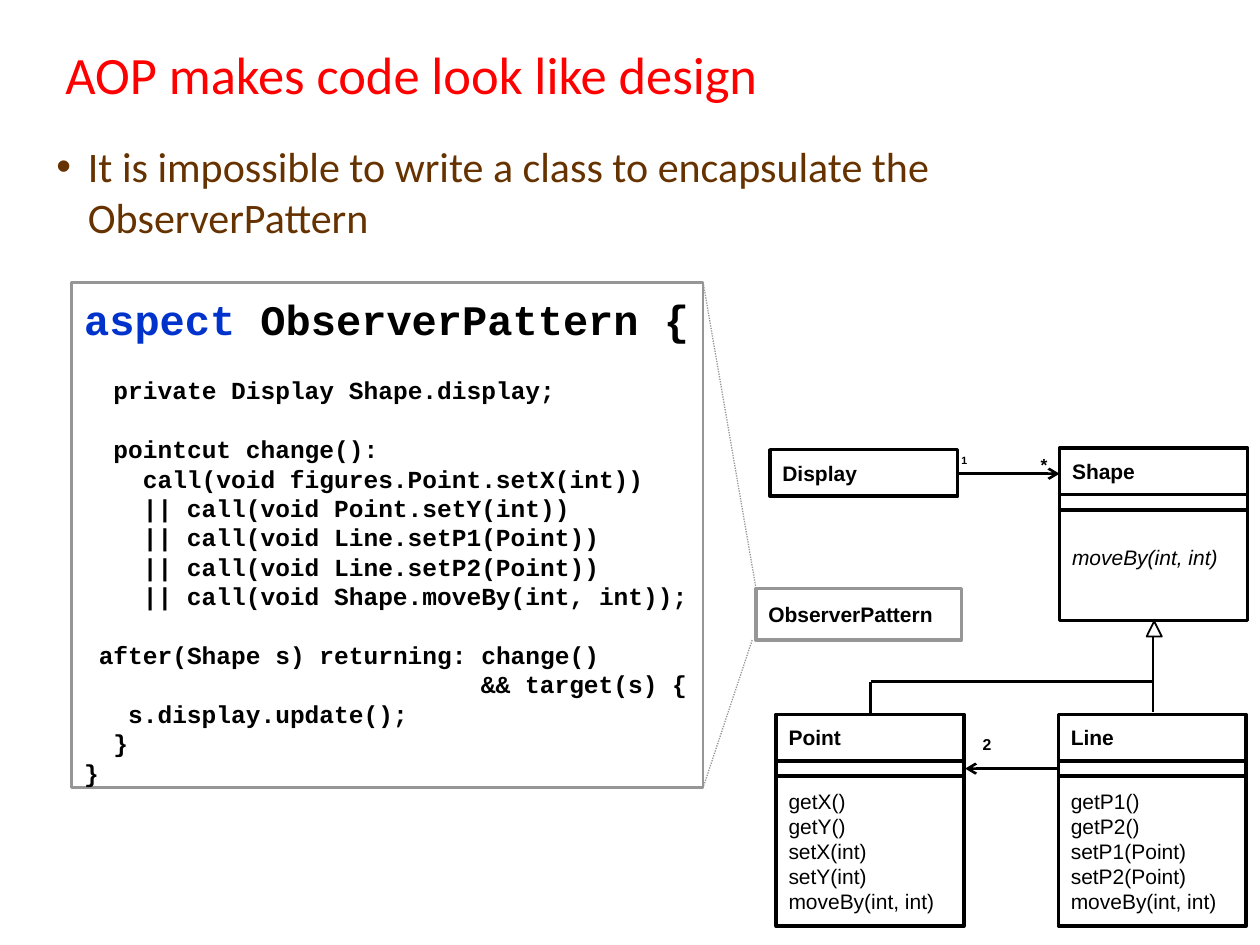
from dataclasses import dataclass
from lxml.etree import SubElement
from pptx import Presentation
from pptx.dml.color import RGBColor
from pptx.enum.dml import MSO_LINE
from pptx.enum.shapes import MSO_CONNECTOR, MSO_SHAPE
from pptx.enum.text import MSO_ANCHOR, PP_ALIGN
from pptx.oxml.ns import qn
from pptx.util import Pt

RED = RGBColor(0xFF, 0x00, 0x00)
BROWN = RGBColor(0x66, 0x33, 0x00)
BLUE = RGBColor(0x00, 0x33, 0xCC)
BLACK = RGBColor(0x00, 0x00, 0x00)
GRAY = RGBColor(0x96, 0x96, 0x96)
WHITE = RGBColor(0xFF, 0xFF, 0xFF)
WIDE = 107.3
HEAD = 26.6
BAND = 8.7
CHAR = 8.4
STEP = 16.8


@dataclass
class Font:
    size: float = 12
    name: str = "Arial"
    color: RGBColor = BLACK
    bold: bool = False
    italic: bool = False


@dataclass
class Row:
    text: str
    indent: int = 0
    gap: float = 0


@dataclass
class Entry:
    name: str
    left: float
    top: float
    calls: tuple = ()
    depth: float = 0
    italic: bool = False


BOLD = Font(bold=True)
CODE = Font(14, "Courier New", bold=True)
ROWS = [
    Row("private Display Shape.display;", 2, 18),
    Row("pointcut change():", 2, STEP),
    Row("call(void figures.Point.setX(int))", 4),
    Row("|| call(void Point.setY(int))", 4),
    Row("|| call(void Line.setP1(Point))", 4),
    Row("|| call(void Line.setP2(Point))", 4),
    Row("|| call(void Shape.moveBy(int, int));", 4),
    Row("after(Shape s) returning: change()", 1, STEP),
    Row("&& target(s) {", 27),
    Row("s.display.update();", 3),
    Row("}", 2),
    Row("}"),
]
MOVE = "moveBy(int, int)"
CLASSES = [
    Entry("Display", 440, 257),
    Entry("Point", 443.5, 408.2,
          ("getX()", "getY()", "setX(int)", "setY(int)", MOVE), 85.7),
    Entry("Line", 604.8, 408.2,
          ("getP1()", "getP2()", "setP1(Point)", "setP2(Point)", MOVE), 85.7),
    Entry("Shape", 605.5, 256, (MOVE,), 63.3, True),
]
LABELS = [
    ("1", 542.2, 255.6, 21, 6),
    ("2", 554.4, 416.2, 18, 9),
    ("*", 587.5, 255.6, 18, 10),
]
TREE = [
    (497.5, 407.5, 497.5, 389.5),
    (658.8, 406.8, 658.8, 362.9),
    (497.5, 389.5, 658.8, 389.5),
]
RAYS = [
    (432, 336.2, 401.8, 161.3),
    (429.8, 365.8, 401.8, 450),
]
ARROWS = [
    (604.8, 439.2, 551.5, 439.2),
    (547.2, 270.7, 605.5, 270.7),
]


def add_run(para, text: str, font: Font) -> None:
    run = para.add_run()
    run.text = text
    run.font.size = Pt(font.size)
    run.font.name = font.name
    run.font.color.rgb = font.color
    run.font.bold = font.bold
    run.font.italic = font.italic


def add_box(slide, left: float, top: float, width: float, height: float,
            line: RGBColor = BLACK, weight: float = 2, fill=None,
            kind=MSO_SHAPE.RECTANGLE):
    box = slide.shapes.add_shape(kind, Pt(left), Pt(top), Pt(width), Pt(height))
    box.shadow.inherit = False
    if fill is None:
        box.fill.background()
    else:
        box.fill.solid()
        box.fill.fore_color.rgb = fill
    box.line.color.rgb = line
    box.line.width = Pt(weight)
    return box


def add_lines(box, lines: tuple, font: Font) -> None:
    frame = box.text_frame
    frame.vertical_anchor = MSO_ANCHOR.MIDDLE
    for n, text in enumerate(lines):
        para = frame.add_paragraph() if n else frame.paragraphs[0]
        para.alignment = PP_ALIGN.LEFT
        para.line_spacing = Pt(14.4)
        add_run(para, text, font)


def add_line(slide, ends: tuple, color: RGBColor = BLACK,
             weight: float = 1.5, dash=None, arrow: bool = False) -> None:
    line = slide.shapes.add_connector(
        MSO_CONNECTOR.STRAIGHT, *[Pt(end) for end in ends])
    line.line.color.rgb = color
    line.line.width = Pt(weight)
    if dash is not None:
        line.line.dash_style = dash
    if arrow:
        SubElement(line.line._get_or_add_ln(), qn("a:tailEnd"), type="arrow")
    SubElement(line._element.spPr, qn("a:effectLst"))


def add_text(slide, left: float, top: float, width: float, height: float):
    box = slide.shapes.add_textbox(Pt(left), Pt(top), Pt(width), Pt(height))
    box.text_frame.word_wrap = True
    return box.text_frame.paragraphs[0]


def add_title(slide) -> None:
    title = slide.shapes.title
    title.left, title.top = Pt(30.2), Pt(23.8)
    title.width, title.height = Pt(653.8), Pt(36)
    title.text_frame.vertical_anchor = MSO_ANCHOR.MIDDLE
    para = title.text_frame.paragraphs[0]
    para.alignment = PP_ALIGN.LEFT
    add_run(para, "AOP makes code look like design", Font(30, "Calibri", RED))


def add_point(slide) -> None:
    para = add_text(slide, 25.2, 77, 660.2, 408.2)
    props = para._p.get_or_add_pPr()
    props.set("marL", str(Pt(18)))
    props.set("indent", str(-Pt(18)))
    SubElement(props, qn("a:buFont"), typeface="Arial")
    SubElement(props, qn("a:buChar"), char="•")
    add_run(para, "It is impossible to write a class to encapsulate the "
            "ObserverPattern", Font(24, "Calibri", BROWN))


def add_code(slide) -> None:
    frame = add_box(slide, 41, 161.3, 360.8, 288.7, GRAY, 1.5, WHITE).text_frame
    frame.vertical_anchor = MSO_ANCHOR.TOP
    frame.margin_right = Pt(0)
    first = frame.paragraphs[0]
    first.alignment = PP_ALIGN.LEFT
    first.line_spacing = Pt(31.6)
    add_run(first, "aspect", Font(24, "Courier New", BLUE, True))
    add_run(first, " ObserverPattern {", Font(24, "Courier New", bold=True))
    for row in ROWS:
        para = frame.add_paragraph()
        para.alignment = PP_ALIGN.LEFT
        para.line_spacing = Pt(STEP)
        para.space_before = Pt(row.gap)
        para._p.get_or_add_pPr().set("marL", str(Pt(row.indent * CHAR)))
        add_run(para, row.text, CODE)


def add_class(slide, entry: Entry) -> None:
    add_lines(add_box(slide, entry.left, entry.top, WIDE, HEAD),
              (entry.name,), BOLD)
    if entry.calls:
        base = entry.top + HEAD
        top = base if entry.italic else base + BAND
        depth = entry.depth + BAND if entry.italic else entry.depth
        body = add_box(slide, entry.left, top, WIDE, depth)
        add_lines(body, entry.calls, Font(italic=entry.italic))
        add_box(slide, entry.left, base, WIDE, BAND)


def main() -> None:
    deck = Presentation()
    deck.slide_width, deck.slide_height = Pt(720), Pt(540)
    slide = deck.slides.add_slide(deck.slide_layouts[5])
    add_title(slide)
    add_point(slide)
    add_code(slide)
    add_lines(add_box(slide, 432, 336.2, 117.4, 29.5, GRAY),
              ("ObserverPattern",), BOLD)
    for ends in RAYS:
        add_line(slide, ends, GRAY, 0.75, MSO_LINE.ROUND_DOT)
    for ends in TREE:
        add_line(slide, ends)
    for entry in CLASSES:
        add_class(slide, entry)
    add_box(slide, 655.2, 355, 8.7, 8.7, weight=1, fill=WHITE,
            kind=MSO_SHAPE.ISOSCELES_TRIANGLE)
    for ends in ARROWS:
        add_line(slide, ends, arrow=True)
    for text, left, top, width, size in LABELS:
        add_run(add_text(slide, left, top, width, 18), text,
                Font(size, bold=True))
    deck.save("out.pptx")


if __name__ == "__main__":
    main()
